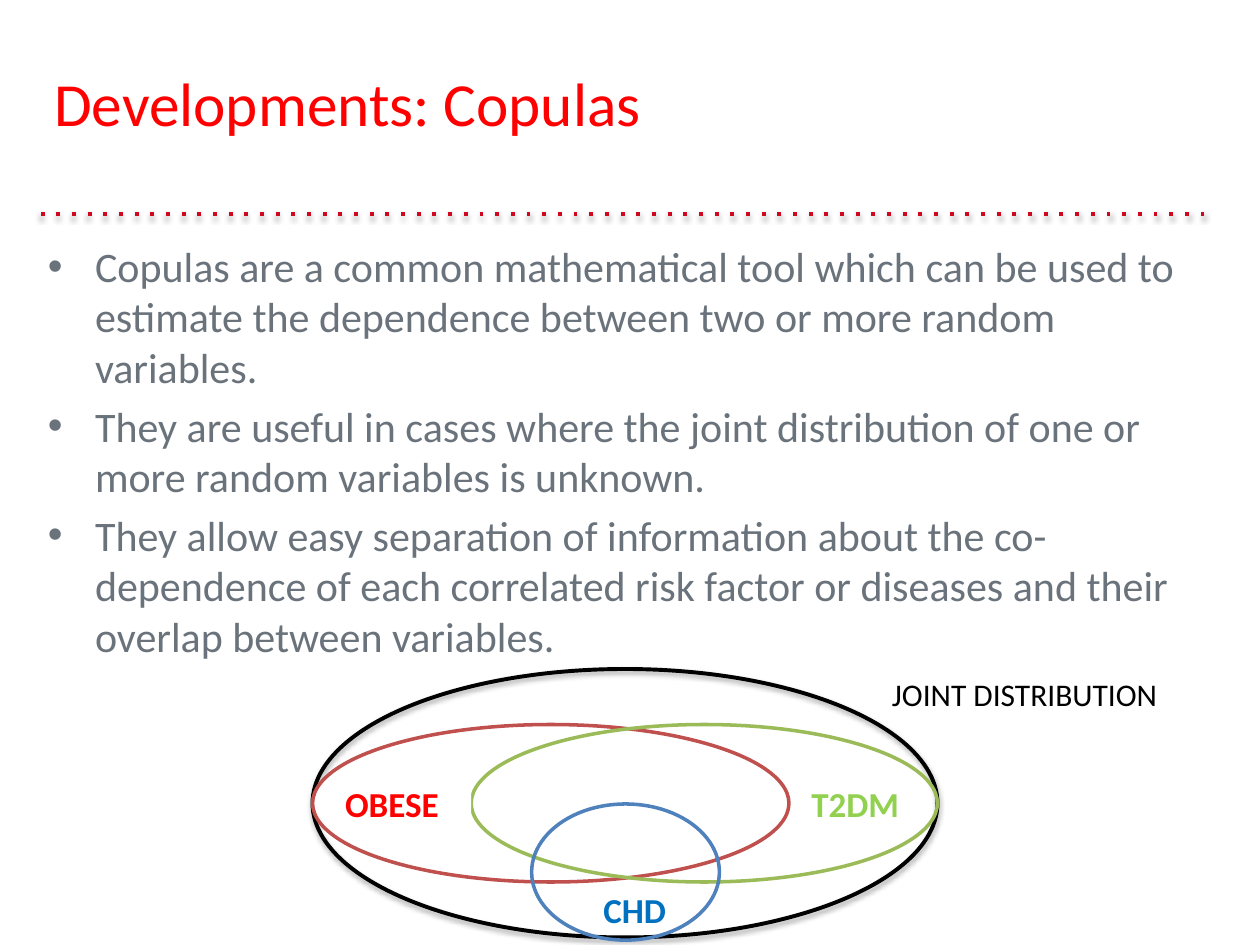
from lxml.etree import SubElement
from pptx import Presentation
from pptx.dml.color import RGBColor
from pptx.enum.shapes import MSO_CONNECTOR, MSO_SHAPE
from pptx.enum.text import MSO_ANCHOR, MSO_AUTO_SIZE, PP_ALIGN
from pptx.oxml.ns import qn
from pptx.util import Pt

FONT = "Calibri"
COLORS = {
    "red": "FF0000", "rule": "CD0920", "gray": "6A737B", "black": "000000",
    "white": "FFFFFF", "brick": "C0504D", "olive": "9BBB59", "steel": "4F81BD",
    "green": "92D050", "blue": "0070C0",
}
TITLE = "Developments: Copulas"
BULLETS = [
    "Copulas are a common mathematical tool which can be used to estimate the "
    "dependence between two or more random variables.",
    "They are useful in cases where the joint distribution of one or more random "
    "variables is unknown.",
    "They allow easy separation of information about the co-dependence of each "
    "correlated risk factor or diseases and their overlap between variables.",
]
JOINT = (178.6, 382.3, 357.1, 153.4)
SETS = [
    ((178.6, 414, 272.2, 90), "brick", "white"),
    ((269.3, 414, 266.4, 90), "olive", None),
    ((303.8, 459.4, 107.3, 77.8), "steel", None),
]
LABELS = [
    ("OBESE", (190.1, 443.5, 79.2, 31.7), 20, "red", True, "white"),
    ("T2DM", (456.5, 443.5, 66.2, 31.7), 20, "green", True, None),
    ("CHD", (337.7, 504, 66.2, 31.7), 20, "blue", True, None),
    ("JOINT DISTRIBUTION", (502.6, 382.3, 186.5, 28.8), 18, "black", False, None),
]


def rgb(name):
    return RGBColor.from_string(COLORS[name])


def points(values):
    return [Pt(value) for value in values]


def add_shadow(shape, opacity, distance):
    properties = shape._element.spPr
    effects = properties.find(qn("a:effectLst"))
    if effects is None:
        effects = SubElement(properties, qn("a:effectLst"))
    shadow = SubElement(effects, qn("a:outerShdw"), blurRad=str(Pt(3.1)),
                        dist=str(Pt(distance)), dir="5400000", rotWithShape="0")
    color = SubElement(shadow, qn("a:srgbClr"), val=COLORS["black"])
    SubElement(color, qn("a:alpha"), val=str(opacity * 1000))


def add_span(para, text, size, color, bold=False):
    span = para.add_run()
    span.text = text
    span.font.name = FONT
    span.font.size = Pt(size)
    span.font.bold = bold
    span.font.color.rgb = rgb(color)


def add_ellipse(page, frame, color, width, fill=None):
    ellipse = page.shapes.add_shape(MSO_SHAPE.OVAL, *points(frame))
    ellipse.shadow.inherit = False
    if fill:
        ellipse.fill.solid()
        ellipse.fill.fore_color.rgb = rgb(fill)
    else:
        ellipse.fill.background()
    ellipse.line.color.rgb = rgb(color)
    ellipse.line.width = Pt(width)
    return ellipse


def add_title(page):
    title = page.shapes.title
    title.left, title.top, title.width, title.height = points((31, 37.4, 659.5, 56.9))
    frame = title.text_frame
    frame.margin_left = frame.margin_top = frame.margin_right = frame.margin_bottom = 0
    frame.vertical_anchor = MSO_ANCHOR.TOP
    frame.auto_size = MSO_AUTO_SIZE.NONE
    para = frame.paragraphs[0]
    para.alignment = PP_ALIGN.LEFT
    add_span(para, TITLE, 35, "red")


def add_rule(page):
    rule = page.shapes.add_connector(
        MSO_CONNECTOR.STRAIGHT, *points((688.3, 122.4, 23, 122.4)))
    rule.line.color.rgb = rgb("rule")
    rule.line.width = Pt(2.25)
    SubElement(rule.get_or_add_ln(), qn("a:prstDash"), val="dot")
    add_shadow(rule, 38, 1.6)


def add_bullets(page):
    box = page.shapes.add_textbox(*points((20.2, 133.9, 680.4, 385.2)))
    frame = box.text_frame
    frame.word_wrap = True
    for index, text in enumerate(BULLETS):
        para = frame.add_paragraph() if index else frame.paragraphs[0]
        properties = para._p.get_or_add_pPr()
        properties.set("marL", str(Pt(27)))
        properties.set("indent", str(-Pt(27)))
        if index:
            para.space_before = Pt(4.8)
        SubElement(properties, qn("a:buFont"), typeface="Arial")
        SubElement(properties, qn("a:buChar"), char="•")
        add_span(para, text, 24, "gray")


def add_label(page, text, frame, size, color, bold, fill):
    box = page.shapes.add_textbox(*points(frame))
    box.text_frame.word_wrap = True
    if fill:
        box.fill.solid()
        box.fill.fore_color.rgb = rgb(fill)
    add_span(box.text_frame.paragraphs[0], text, size, color, bold)


def main():
    deck = Presentation()
    deck.slide_width, deck.slide_height = Pt(720), Pt(540)
    page = deck.slides.add_slide(deck.slide_layouts[5])
    add_title(page)
    add_rule(page)
    add_bullets(page)
    add_shadow(add_ellipse(page, JOINT, "black", 2.25), 35, 1.8)
    for frame, color, fill in SETS:
        add_ellipse(page, frame, color, 2, fill)
    for label in LABELS:
        add_label(page, *label)
    deck.save("out.pptx")


if __name__ == "__main__":
    main()
